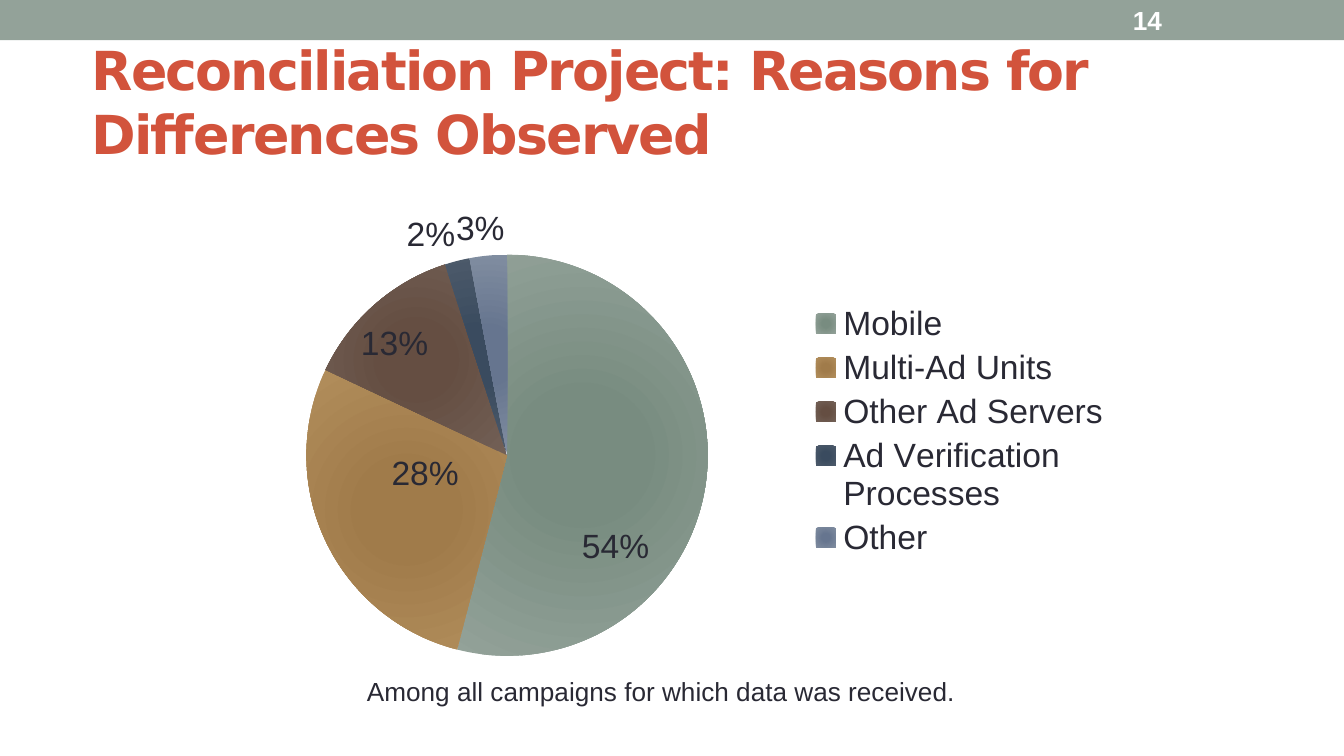
from typing import NamedTuple, Optional

from pptx import Presentation
from pptx.chart.data import CategoryChartData as ChartData
from pptx.dml.color import RGBColor as Rgb
from pptx.enum.chart import XL_CHART_TYPE as Kind
from pptx.enum.chart import XL_LABEL_POSITION as Spot
from pptx.enum.chart import XL_LEGEND_POSITION as Side
from pptx.enum.shapes import MSO_SHAPE as Form
from pptx.enum.text import MSO_ANCHOR as Anchor
from pptx.enum.text import PP_ALIGN as Align
from pptx.oxml import parse_xml
from pptx.oxml.ns import nsdecls
from pptx.util import Cm, Pt

HUES = {"band": "93A299", "title": "D2533C", "text": "292934", "white": "FFFFFF"}


class Slice(NamedTuple):
    name: str
    share: float
    core: str
    rim: str
    spot: Spot = Spot.BEST_FIT
    shift: Optional[tuple] = None


class Label(NamedTuple):
    text: str
    box: tuple
    size: float
    hue: str
    face: str = "Arial"
    bold: bool = False
    align: Align = Align.LEFT
    anchor: Anchor = Anchor.MIDDLE
    track: int = 0


SLICES = [
    Slice("Mobile", 0.54, "788C80", "93A299", Spot.CENTER, (0.01, 0.16)),
    Slice("Multi-Ad Units", 0.28, "A07B4A", "B28E5C", Spot.CENTER, (0.01, -0.05)),
    Slice("Other Ad Servers", 0.13, "654E42", "726056"),
    Slice("Ad Verification Processes", 0.02, "3A4B5F", "4C5A6A"),
    Slice("Other", 0.03, "66758F", "808DA0"),
]
LABELS = [
    Label("Reconciliation Project: Reasons for Differences Observed",
          (1.48, 0.79, 22.66, 2.24), 28.8, "title", "DejaVu Sans", True, track=-100),
    Label("14", (21.16, 0.03, 2.97, 0.69), 14, "white", bold=True),
    Label("Among all campaigns for which data was received.",
          (2.97, 12.65, 19.05, 0.86), 14, "text",
          align=Align.CENTER, anchor=Anchor.TOP),
]


def style(font, size: float, hue: str, face: str = "Arial", bold: bool = False) -> None:
    font.size, font.name, font.bold = Pt(size), face, bold
    font.color.rgb = Rgb.from_string(HUES[hue])


def write(slide, item: Label) -> None:
    frame = slide.shapes.add_textbox(*map(Cm, item.box)).text_frame
    frame.word_wrap = True
    frame.vertical_anchor = item.anchor
    para = frame.paragraphs[0]
    para.text, para.alignment = item.text, item.align
    style(para.font, item.size, item.hue, item.face, item.bold)
    if item.track:
        para.runs[0].font._element.set("spc", str(item.track))


def layout(inner: bool = False, fixed: bool = True, **parts: float):
    """Manual chart layout, in fractions of the chart area."""
    tags = '<c:layoutTarget val="inner"/>' if inner else ""
    if fixed:
        tags += '<c:xMode val="edge"/><c:yMode val="edge"/>'
    tags += "".join(f'<c:{key} val="{val}"/>' for key, val in parts.items())
    return parse_xml(f'<c:layout {nsdecls("c")}><c:manualLayout>{tags}'
                     "</c:manualLayout></c:layout>")


def radial(core: str, rim: str):
    stops = "".join(f'<a:gs pos="{pos}"><a:srgbClr val="{hue}"/></a:gs>'
                    for pos, hue in ((0, core), (25000, core), (100000, rim)))
    return parse_xml(f'<a:gradFill {nsdecls("a")}><a:gsLst>{stops}</a:gsLst>'
                     '<a:path path="circle"><a:fillToRect l="50000" t="50000" '
                     'r="50000" b="50000"/></a:path></a:gradFill>')


def put_layout(node, new, place: int = 1) -> None:
    """Replace the layout among the children of a chart part."""
    for old in node.xpath("./c:layout"):
        node.remove(old)
    node.insert(place, new)


def draw_pie(slide) -> None:
    data = ChartData(number_format="0%")
    data.categories = [part.name for part in SLICES]
    data.add_series("Series 1", [part.share for part in SLICES])
    box = map(Cm, (4.25, 3.52, 16.93, 9.25))
    chart = slide.shapes.add_chart(Kind.PIE, *box, data).chart
    chart.has_title = False
    style(chart.font, 18, "text")

    # Legend and plot area
    chart.has_legend = True
    legend = chart.legend
    legend.position, legend.include_in_layout = Side.RIGHT, False
    put_layout(legend._element, layout(x=0.65, y=0.23, w=0.34, h=0.54))
    area = chart._chartSpace.xpath(".//c:plotArea")[0]
    put_layout(area, layout(True, x=0.09, y=0.14, w=0.45, h=0.82), 0)

    # Slices and their labels
    plot = chart.plots[0]
    plot.vary_by_categories = True
    plot.has_data_labels = True
    tags = plot.data_labels
    tags.show_value, tags.show_percentage = True, False
    tags.number_format, tags.number_format_is_linked = "0%", False
    series = plot.series[0]
    for i, part in enumerate(SLICES):
        point = series.points[i]
        point.format.line.fill.background()
        point.format.fill.background()
        props = point.format.fill._xPr
        props.replace(props.xpath("./a:noFill")[0], radial(part.core, part.rim))
        style(point.data_label.font, 18, "text")
        point.data_label.position = part.spot
        if part.shift:
            x, y = part.shift
            node = series._element.xpath(f'.//c:dLbl[c:idx/@val="{i}"]')[0]
            put_layout(node, layout(fixed=False, x=x, y=y))


def main() -> None:
    deck = Presentation()
    deck.slide_width, deck.slide_height = Cm(25.4), Cm(14.29)
    slide = deck.slides.add_slide(deck.slide_layouts[6])

    # Top band
    band = slide.shapes.add_shape(Form.RECTANGLE, 0, 0, deck.slide_width, Cm(0.76))
    band.shadow.inherit = False
    band.fill.solid()
    band.fill.fore_color.rgb = Rgb.from_string(HUES["band"])
    band.line.fill.background()

    # Chart and texts
    draw_pie(slide)
    for item in LABELS:
        write(slide, item)
    deck.save("out.pptx")


if __name__ == "__main__":
    main()
